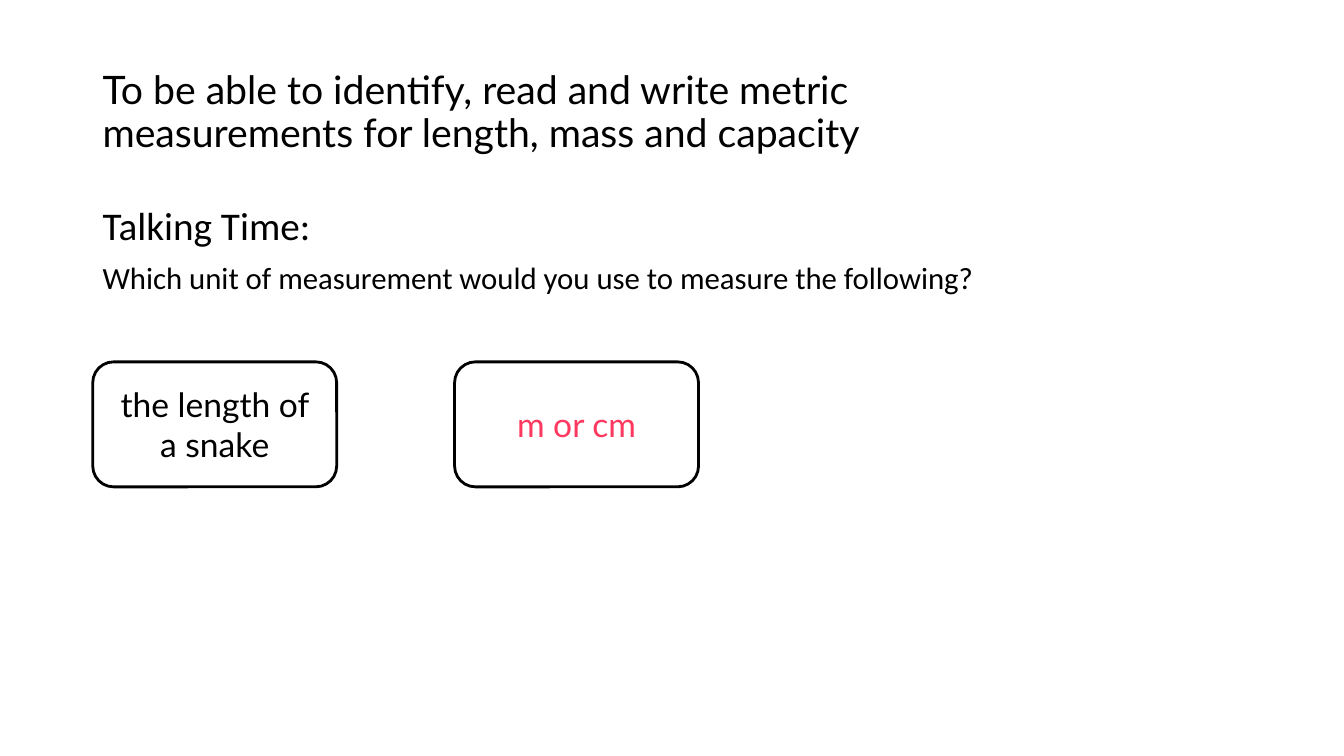
import dataclasses
import typing

import pptx
import pptx.dml.color
import pptx.enum.shapes
import pptx.enum.text
import pptx.presentation
import pptx.slide
import pptx.text.text
import pptx.util

Pt = pptx.util.Pt
RGBColor = pptx.dml.color.RGBColor
Align = pptx.enum.text.PP_ALIGN
Anchor = pptx.enum.text.MSO_ANCHOR


@dataclasses.dataclass(frozen=True)
class Theme:
    ink: RGBColor = RGBColor(0x00, 0x00, 0x00)
    paper: RGBColor = RGBColor(0xFF, 0xFF, 0xFF)
    answer: RGBColor = RGBColor(0xFF, 0x38, 0x60)
    display_font: str = "Lato"
    body_font: str = "Calibri"
    heading_size: float = 28
    question_size: float = 22
    card_size: float = 24
    outline_width: float = 2


class Line(typing.NamedTuple):
    text: str
    font: str
    size: float
    color: RGBColor


class TextBlock(typing.NamedTuple):
    top: float
    width: float
    height: float
    anchor: Anchor
    lines: tuple[Line, ...]


THEME = Theme()
LEFT = 66.24
CARD_TOP, CARD_WIDTH, CARD_HEIGHT, CARD_STEP = 258.48, 174.24, 89.28, 258.48

BLOCKS = (
    TextBlock(28.8, 691.2, 104.4, Anchor.MIDDLE, (
        Line("To be able to identify, read and write metric measurements "
             "for length, mass and capacity",
             THEME.display_font, THEME.heading_size, THEME.ink),
    )),
    TextBlock(144, 828, 342.72, Anchor.TOP, (
        Line("Talking Time:", THEME.body_font, THEME.heading_size, THEME.ink),
        Line("Which unit of measurement would you use to measure the following?",
             THEME.body_font, THEME.question_size, THEME.ink),
    )),
)
CARDS = (
    Line("the length of a snake", THEME.display_font, THEME.card_size, THEME.ink),
    Line("m or cm", THEME.display_font, THEME.card_size, THEME.answer),
)


def apply_format(target: typing.Any, values: dict[str, typing.Any]) -> None:
    for name, value in values.items():
        setattr(target, name, value)


def write_line(paragraph: pptx.text.text._Paragraph, line: Line,
               values: dict[str, typing.Any]) -> None:
    paragraph.text = line.text
    apply_format(paragraph, values)
    apply_format(paragraph.font, {"name": line.font, "size": Pt(line.size)})
    paragraph.font.color.rgb = line.color


def draw_block(slide: pptx.slide.Slide, block: TextBlock) -> None:
    shape = slide.shapes.add_textbox(
        Pt(LEFT), Pt(block.top), Pt(block.width), Pt(block.height))
    frame = shape.text_frame
    apply_format(frame, {"word_wrap": True, "vertical_anchor": block.anchor})
    for index, line in enumerate(block.lines):
        paragraph = frame.add_paragraph() if index else frame.paragraphs[0]
        write_line(paragraph, line, {
            "line_spacing": 0.9, "space_before": Pt(10 if index else 0)})


def draw_card(slide: pptx.slide.Slide, column: int, line: Line) -> None:
    shape = slide.shapes.add_shape(
        pptx.enum.shapes.MSO_SHAPE.ROUNDED_RECTANGLE,
        Pt(LEFT + column * CARD_STEP), Pt(CARD_TOP), Pt(CARD_WIDTH), Pt(CARD_HEIGHT))
    shape.shadow.inherit = False
    shape.fill.solid()
    shape.fill.fore_color.rgb = THEME.paper
    shape.line.color.rgb = THEME.ink
    shape.line.width = Pt(THEME.outline_width)
    frame = shape.text_frame
    apply_format(frame, {"word_wrap": True, "vertical_anchor": Anchor.MIDDLE})
    write_line(frame.paragraphs[0], line, {"alignment": Align.CENTER})


def main() -> None:
    """Build the slide on choosing units of measurement."""
    presentation = pptx.Presentation()
    apply_format(presentation, {"slide_width": Pt(960), "slide_height": Pt(540)})
    slide = presentation.slides.add_slide(presentation.slide_layouts[6])
    for block in BLOCKS:
        draw_block(slide, block)
    for column, line in enumerate(CARDS):
        draw_card(slide, column, line)
    presentation.save("out.pptx")


if __name__ == "__main__":
    main()
